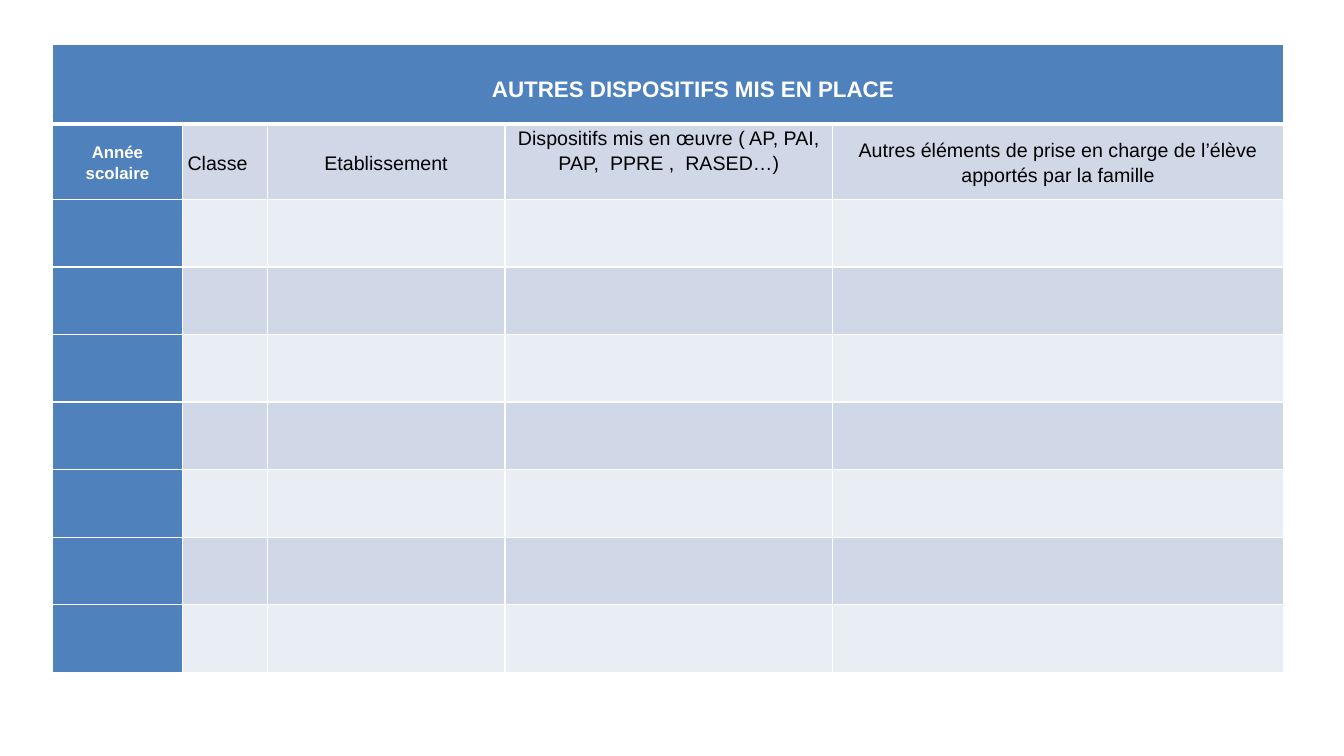
from dataclasses import dataclass
from lxml.etree import SubElement
from pptx import Presentation
from pptx.dml.color import RGBColor
from pptx.enum.text import MSO_ANCHOR, PP_ALIGN
from pptx.oxml.ns import qn
from pptx.util import Inches, Pt

TITLE = "AUTRES DISPOSITIFS MIS EN PLACE"
HEADS = [
    "Année\nscolaire",
    "Classe",
    "Etablissement",
    "Dispositifs mis en œuvre ( AP, PAI, PAP,  PPRE ,  RASED…)",
    "Autres éléments de prise en charge de l’élève\napportés par la famille",
]
WIDTHS = [1.29, 0.84, 2.36, 3.25, 4.47]
YEARS = 7
HEIGHTS = [0.79, 0.75] + [0.67] * YEARS
LEFT, TOP = 0.52, 0.44


@dataclass(frozen=True)
class Theme:
    font: str = "Arial"
    blue: str = "4F81BD"
    dark: str = "D0D8E8"
    light: str = "E9EDF4"
    white: str = "FFFFFF"
    black: str = "000000"
    title: int = 16
    year: int = 12
    head: int = 14
    thin: int = 1
    thick: int = 3


THEME = Theme()


def edge(cell, side, width):
    line = SubElement(cell._tc.get_or_add_tcPr(), qn(f"a:ln{side}"), w=str(Pt(width)))
    fill = SubElement(line, qn("a:solidFill"))
    SubElement(fill, qn("a:srgbClr"), val=THEME.white)


def paint(cell, row, col):
    for side in "LRTB":
        joint = (row, side) in ((0, "B"), (1, "T"))
        edge(cell, side, THEME.thick if joint else THEME.thin)
    band = THEME.dark if row % 2 else THEME.light
    color = THEME.blue if row == 0 or col == 0 else band
    cell.fill.solid()
    cell.fill.fore_color.rgb = RGBColor.from_string(color)


def write(cell, text, size, color, bold, align=PP_ALIGN.CENTER):
    cell.margin_left = cell.margin_right = Inches(0.05)
    cell.margin_top = cell.margin_bottom = 0
    cell.vertical_anchor = MSO_ANCHOR.MIDDLE
    cell.text_frame.text = text
    for para in cell.text_frame.paragraphs:
        para.alignment = align
        para.line_spacing = 1.15
        font = para.runs[0].font
        font.name, font.size, font.bold = THEME.font, Pt(size), bold
        font.color.rgb = RGBColor.from_string(color)


def main():
    deck = Presentation()
    deck.slide_width, deck.slide_height = Inches(13.33), Inches(7.5)
    slide = deck.slides.add_slide(deck.slide_layouts[6])
    frame = slide.shapes.add_table(
        len(HEIGHTS), len(WIDTHS), Inches(LEFT), Inches(TOP),
        Inches(sum(WIDTHS)), Inches(sum(HEIGHTS)))
    table = frame.table
    table.first_col = True
    for col, width in zip(table.columns, WIDTHS):
        col.width = Inches(width)
    for row, height in zip(table.rows, HEIGHTS):
        row.height = Inches(height)
    for row in range(len(HEIGHTS)):
        for col in range(len(WIDTHS)):
            paint(table.cell(row, col), row, col)

    banner = table.cell(0, 0)
    banner.merge(table.cell(0, len(WIDTHS) - 1))
    write(banner, TITLE, THEME.title, THEME.white, True)
    banner.vertical_anchor = MSO_ANCHOR.TOP
    banner.margin_top = Inches(0.29)
    banner.margin_left = Inches(0.55)

    for col, text in enumerate(HEADS):
        cell = table.cell(1, col)
        if col == 0:
            write(cell, text, THEME.year, THEME.white, True)
        else:
            align = PP_ALIGN.LEFT if col == 1 else PP_ALIGN.CENTER
            write(cell, text, THEME.head, THEME.black, False, align)
    table.cell(1, 3).margin_bottom = Inches(0.24)

    deck.save("out.pptx")


if __name__ == "__main__":
    main()
